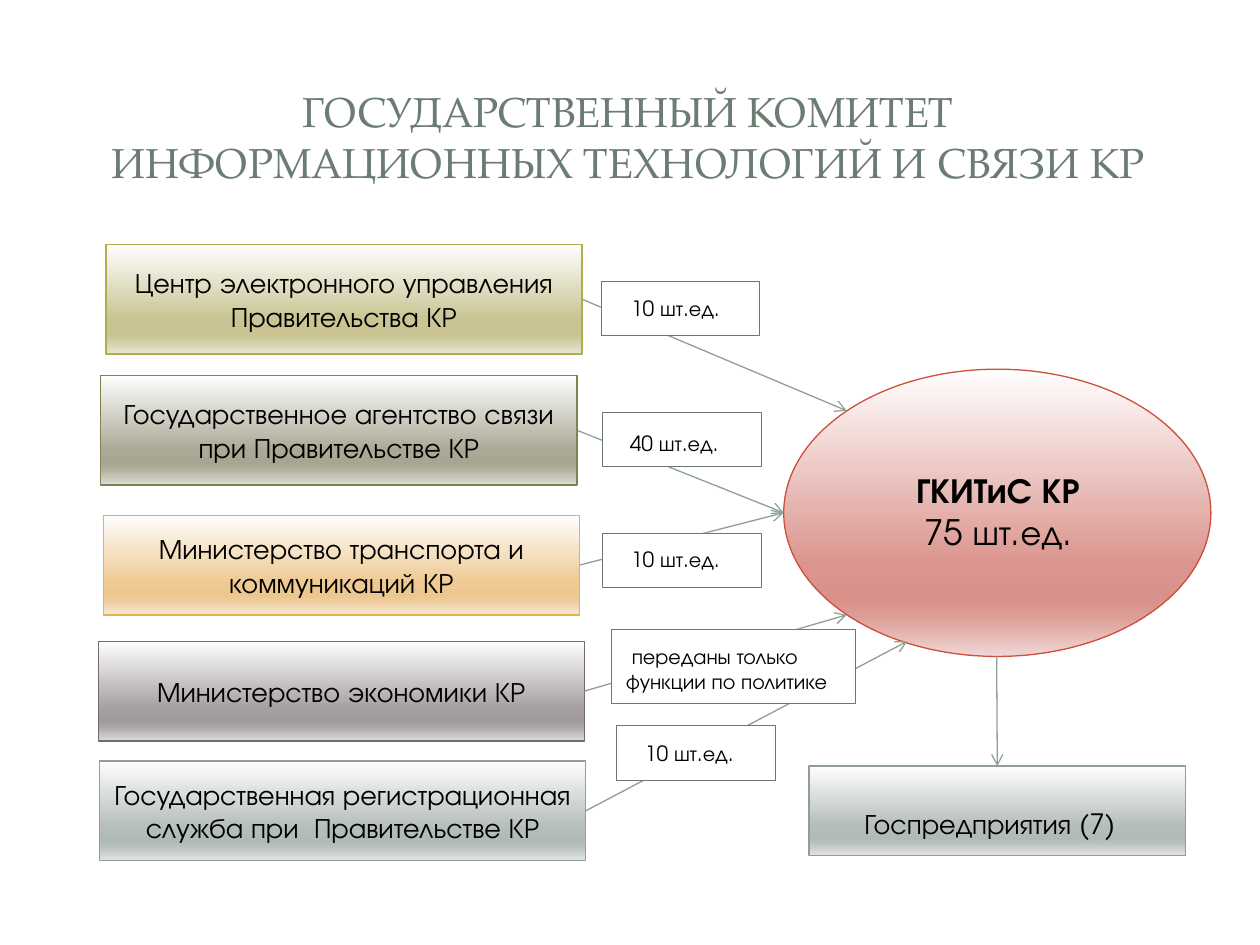
import dataclasses

import lxml.etree
import pptx
import pptx.dml.color
import pptx.enum.shapes
import pptx.enum.text
import pptx.oxml.ns
import pptx.util

Inches = pptx.util.Inches
Pt = pptx.util.Pt
Shape = pptx.enum.shapes.MSO_SHAPE
Align = pptx.enum.text.PP_ALIGN
Anchor = pptx.enum.text.MSO_ANCHOR
qn = pptx.oxml.ns.qn


@dataclasses.dataclass(frozen=True)
class Theme:
    title_font: str = "TeX Gyre Pagella"
    body_font: str = "TeX Gyre Adventor"
    title_size: int = 24
    total_size: int = 20
    body_size: int = 16
    label_size: int = 12
    title_color: str = "6B7D72"
    text_color: str = "000000"
    paper: str = "FFFFFF"
    arrow_color: str = "8F9F96"
    label_line: str = "6D7871"
    line_width: float = 0.75
    label_width: float = 0.25
    stop_positions: tuple = (0, 68, 81, 86, 100)
    olive: tuple = ("B3AC4F", "FEFEFE", "C9C594", "C8C390", "CCC89C", "E9E7D7")
    khaki: tuple = ("827E55", "FEFEFE", "ABA996", "A8A692", "B1AF9E", "DEDDD8")
    amber: tuple = ("E7B248", "FFFEFE", "EEC992", "EDC88E", "EECC9B", "F7E9D7")
    mauve: tuple = ("76696E", "FEFEFE", "A59FA1", "A19B9E", "ABA6A8", "DCDADB")
    sage: tuple = ("8F9F96", "FEFEFE", "B4BDB7", "B1BBB5", "B9C1BC", "E1E4E2")
    red: tuple = ("CE503A", "FFFEFE", "DB958E", "DA918A", "DD9D97", "F0D7D5")


def rgb(value):
    return pptx.dml.color.RGBColor.from_string(value)


class SlideBuilder:
    def __init__(self, theme, slide):
        self.theme = theme
        self.slide = slide

    def add_lines(self, shape, lines, size, align=Align.CENTER, anchor=Anchor.MIDDLE,
                  font=None, color=None):
        frame = shape.text_frame
        frame.word_wrap = True
        frame.vertical_anchor = anchor
        for index, (text, bold) in enumerate(lines):
            para = frame.paragraphs[0] if index == 0 else frame.add_paragraph()
            para.alignment = align
            span = para.add_run()
            span.text = text
            span.font.name = font or self.theme.body_font
            span.font.size = Pt(size)
            span.font.bold = bold
            span.font.color.rgb = rgb(color or self.theme.text_color)

    def text(self, place, lines, size, **style):
        box = self.slide.shapes.add_textbox(*map(Inches, place))
        self.add_lines(box, lines, size, **style)

    def outlined(self, kind, place, color, width):
        shape = self.slide.shapes.add_shape(kind, *map(Inches, place))
        shape.shadow.inherit = False
        shape.line.color.rgb = rgb(color)
        shape.line.width = Pt(width)
        return shape

    def glossy(self, kind, place, palette, text=None):
        line_color, *colors = palette
        shape = self.outlined(kind, place, line_color, self.theme.line_width)
        shape.fill.gradient()
        shape.fill.gradient_angle = 270
        stops = shape.element.spPr.find(".//" + qn("a:gsLst"))
        for stop in list(stops):
            stops.remove(stop)
        for position, color in zip(self.theme.stop_positions, colors):
            stop = lxml.etree.SubElement(stops, qn("a:gs"), pos=str(position * 1000))
            lxml.etree.SubElement(stop, qn("a:srgbClr"), val=color)
        if text:
            self.add_lines(shape, [(text, False)], self.theme.body_size)
        return shape

    def label_box(self, place):
        box = self.outlined(Shape.RECTANGLE, place, self.theme.label_line,
                            self.theme.label_width)
        box.fill.solid()
        box.fill.fore_color.rgb = rgb(self.theme.paper)

    def arrow(self, start, end, source=None, target=None):
        line = self.slide.shapes.add_connector(
            pptx.enum.shapes.MSO_CONNECTOR.STRAIGHT, *map(Inches, (*start, *end)))
        if source is not None:
            line.begin_connect(source, 3)
        if target is not None:
            line.end_connect(target, 0)
        line.line.color.rgb = rgb(self.theme.arrow_color)
        line.line.width = Pt(self.theme.line_width)
        properties = line.element.spPr
        lxml.etree.SubElement(properties.find(qn("a:ln")), qn("a:tailEnd"), type="arrow")
        lxml.etree.SubElement(properties, qn("a:effectLst"))


def main():
    theme = Theme()
    deck = pptx.Presentation()
    deck.slide_width = Inches(10)
    deck.slide_height = Inches(7.5)
    page = SlideBuilder(theme, deck.slides.add_slide(deck.slide_layouts[6]))

    page.text((0.47, 0.45, 9.03, 1.26),
              [("ГОСУДАРСТВЕННЫЙ КОМИТЕТ ИНФОРМАЦИОННЫХ ТЕХНОЛОГИЙ И СВЯЗИ КР", False)],
              theme.title_size, font=theme.title_font, color=theme.title_color)

    agencies = [
        ((0.84, 1.94, 3.78, 0.87), theme.olive, (6.72, 3.26),
         "Центр электронного управления Правительства КР"),
        ((0.8, 2.98, 3.78, 0.87), theme.khaki, (6.22, 4.07),
         "Государственное агентство связи при Правительстве КР"),
        ((0.82, 4.09, 3.78, 0.79), theme.amber, (6.22, 4.07),
         "Министерство транспорта и коммуникаций КР"),
        ((0.78, 5.09, 3.86, 0.79), theme.mauve, (6.72, 4.88),
         "Министерство экономики КР"),
        ((0.79, 6.04, 3.86, 0.79), theme.sage, (7.2, 5.09),
         "Государственная регистрационная служба при  Правительстве КР"),
    ]
    sources = [page.glossy(Shape.RECTANGLE, place, palette, text)
               for place, palette, _, text in agencies]

    page.glossy(Shape.OVAL, (6.22, 2.93, 3.39, 2.28), theme.red)
    page.text((6.8, 3.67, 2.24, 0.77), [("ГКИТиС КР", True), ("75 шт.ед.", False)],
              theme.total_size, anchor=Anchor.TOP)

    enterprises = page.glossy(Shape.RECTANGLE, (6.42, 6.08, 2.99, 0.71), theme.sage)
    page.text((6.41, 6.35, 2.89, 0.37), [("Госпредприятия (7)", False)],
              theme.body_size, anchor=Anchor.TOP)

    for source, (place, _, tip, _) in zip(sources, agencies):
        left, top, width, height = place
        page.arrow((left + width, top + height / 2), tip, source=source)
    page.arrow((7.91, 5.21), (7.91, 6.08), target=enterprises)

    small, small_text = (1.26, 0.43), (1.02, 0.3)
    labels = [
        ((4.77, 2.23, *small), (4.91, 2.3, *small_text), "10 шт.ед."),
        ((4.78, 3.27, *small), (4.9, 3.37, *small_text), "40 шт.ед."),
        ((4.78, 4.23, *small), (4.91, 4.29, *small_text), "10 шт.ед."),
        ((4.85, 4.99, 1.94, 0.59), (4.87, 5.06, 2.23, 0.51),
         " переданы только функции по политике"),
        ((4.89, 5.76, *small), (5.02, 5.83, *small_text), "10 шт.ед."),
    ]
    for box_place, text_place, text in labels:
        page.label_box(box_place)
        page.text(text_place, [(text, False)], theme.label_size,
                  align=Align.LEFT, anchor=Anchor.TOP)

    deck.save("out.pptx")


if __name__ == "__main__":
    main()
